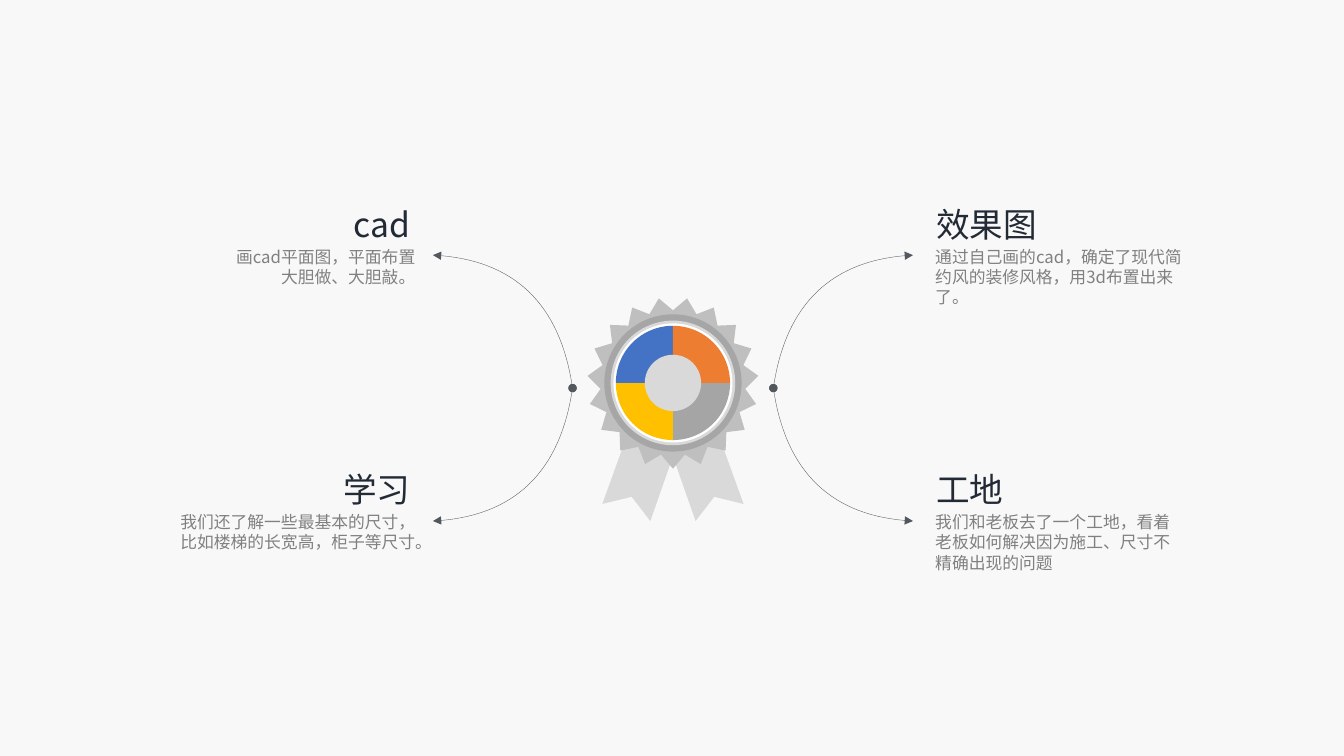
from dataclasses import dataclass
from math import cos, pi, sin

from lxml import etree
from pptx import Presentation
from pptx.dml.color import RGBColor
from pptx.enum import shapes, text
from pptx.oxml import ns
from pptx.util import Cm, Pt


@dataclass(frozen=True)
class Theme:
    font: str = "Noto Sans CJK SC"
    heading_size: int = 24
    body_size: int = 12
    heading: str = "222A35"
    body: str = "808080"
    background: str = "F8F8F8"
    arrow: str = "53585F"
    ribbon: str = "D9D9D9"
    rosette: str = "BFBFBF"
    rim: str = "A6A6A6"
    white: str = "FFFFFF"
    quarters: tuple = ("A5A5A5", "FFC000", "4472C4", "ED7D31")


theme = Theme()
AXIS, HUB, MIDDLE = 16.96, 9.65, 9.78  # medal axis, medal centre, arrow origin (cm)

deck = Presentation()
deck.slide_width, deck.slide_height = Cm(33.87), Cm(19.05)
page = deck.slides.add_slide(deck.slide_layouts[6])
page.background.fill.solid()
page.background.fill.fore_color.rgb = RGBColor.from_string(theme.background)


def draw_outline(points, close):
    """Draw a freeform through points given in centimetres."""
    corners = [(Cm(x), Cm(y)) for x, y in points]
    builder = page.shapes.build_freeform(*corners[0], scale=1.0)
    builder.add_line_segments(corners[1:], close=close)
    shape = builder.convert_to_shape()
    shape.shadow.inherit = False
    return shape


def paint(shape, color):
    """Give a shape a plain fill without line or shadow."""
    shape.shadow.inherit = False
    shape.fill.solid()
    shape.fill.fore_color.rgb = RGBColor.from_string(color)
    shape.line.fill.background()


# Headings and notes: side (-1 left, 1 right), row, heading, note paragraphs
topics = [
    (1, 0, "效果图", "通过自己画的cad，确定了现代简约风的装修风格，用3d布置出来了。"),
    (-1, 0, "cad", "画cad平面图，平面布置\n大胆做、大胆敲。"),
    (-1, 1, "学习", "我们还了解一些最基本的尺寸，比如楼梯的长宽高，柜子等尺寸。"),
    (1, 1, "工地", "我们和老板去了一个工地，看着老板如何解决因为施工、尺寸不精确出现的问题"),
]
for side, row, heading, note in topics:
    heading_left, note_left = (23.34, 23.57) if side > 0 else (5, 4.25)
    drop = 6.68 * row
    heading_box = page.shapes.add_textbox(
        Cm(heading_left), Cm(5.28 + drop), Cm(5.59), Cm(0.74))
    heading_box.text_frame.vertical_anchor = text.MSO_ANCHOR.MIDDLE
    note_box = page.shapes.add_textbox(
        Cm(note_left), Cm(6.22 + drop), Cm(6.22), Cm(1.55 if side > 0 else 1.02))
    frame = note_box.text_frame
    frame.margin_left = frame.margin_top = frame.margin_right = frame.margin_bottom = 0
    frame.auto_size = text.MSO_AUTO_SIZE.SHAPE_TO_FIT_TEXT

    for box, words, size, color in (
        (heading_box, heading, theme.heading_size, theme.heading),
        (note_box, note, theme.body_size, theme.body),
    ):
        box.text_frame.word_wrap = True
        box.text_frame.text = words
        for para in box.text_frame.paragraphs:
            para.alignment = text.PP_ALIGN.LEFT if side > 0 else text.PP_ALIGN.RIGHT
            for span in para.runs:
                span.font.size = Pt(size)
                span.font.name = theme.font
                span.font.color.rgb = RGBColor.from_string(color)
                east_asian = etree.SubElement(span.font._element, ns.qn("a:ea"))
                east_asian.set("typeface", theme.font)

# Curved arrows: cubic Bézier control points as offsets from the arrow origin
controls = [(6.05, 3.35), (4.01, 3.25), (2.84, 2.13), (2.53, 0)]
STEPS = 32
for vertical in (-1, 1):
    for side in (-1, 1):
        curve = []
        for step in range(STEPS + 1):
            t = step / STEPS
            weights = ((1 - t) ** 3, 3 * t * (1 - t) ** 2, 3 * t * t * (1 - t), t ** 3)
            across = sum(w * x for w, (x, y) in zip(weights, controls))
            along = sum(w * y for w, (x, y) in zip(weights, controls))
            curve.append((AXIS + side * across, MIDDLE + vertical * along))
        arrow = draw_outline(curve, close=False)
        arrow.fill.background()
        arrow.line.color.rgb = RGBColor.from_string(theme.arrow)
        arrow.line.width = Pt(0.25)
        for end, kind in (("headEnd", "triangle"), ("tailEnd", "oval")):
            tip = etree.SubElement(arrow.line._get_or_add_ln(), ns.qn(f"a:{end}"))
            tip.set("type", kind)

# Medal ribbons, mirrored about the axis
ribbon = [(1.78, 12.7), (0.97, 10.46), (-0.21, 10.9),
          (0.57, 13.13), (1.04, 12.52)]
for side in (-1, 1):
    paint(draw_outline([(AXIS + side * x, y) for x, y in ribbon], close=True),
          theme.ribbon)

# Toothed rosette
TEETH = 19
rosette = []
for corner in range(2 * TEETH):
    radius = 1.83 if corner % 2 else 2.16
    angle = pi * corner / TEETH
    rosette.append((AXIS + radius * sin(angle), HUB + radius * cos(angle)))
paint(draw_outline(rosette, close=True), theme.rosette)

# Concentric discs, then the four quarters, then the hub
kinds = shapes.MSO_SHAPE
discs = [(kinds.OVAL, 1.73, theme.rim, None), (kinds.OVAL, 1.57, theme.ribbon, None),
         (kinds.OVAL, 1.5, theme.white, None)]
discs += [(kinds.PIE, 1.44, color, 90 * turn)
          for turn, color in enumerate(theme.quarters)]
discs.append((kinds.OVAL, 0.71, theme.ribbon, None))
for kind, radius, color, start in discs:
    disc = page.shapes.add_shape(
        kind, Cm(AXIS - radius), Cm(HUB - radius), Cm(2 * radius), Cm(2 * radius))
    paint(disc, color)
    if start is not None:
        disc.adjustments[0] = start * 0.6  # 60000 units per degree, stored per 100000
        disc.adjustments[1] = (start + 90) % 360 * 0.6

deck.save("out.pptx")
